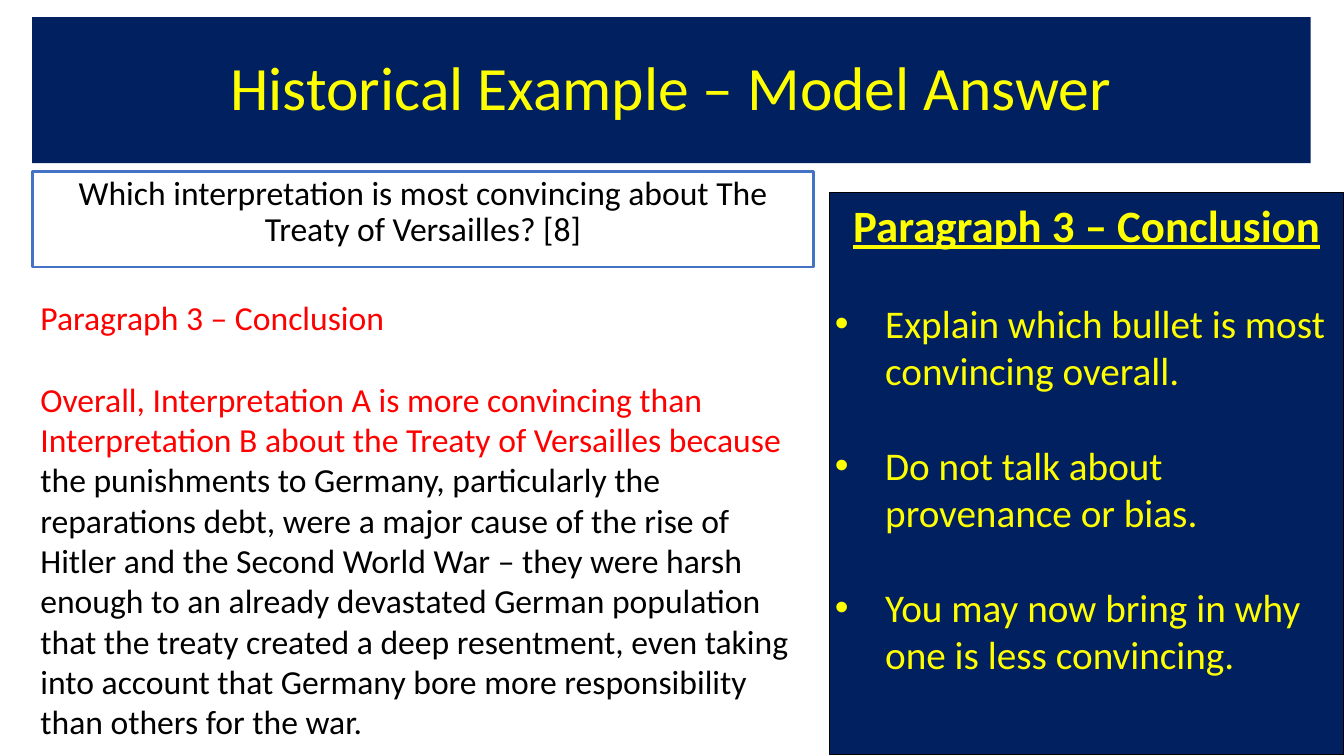
from dataclasses import dataclass

from lxml.etree import SubElement
from pptx import Presentation
from pptx.dml.color import RGBColor
from pptx.enum.shapes import MSO_SHAPE
from pptx.enum.text import MSO_ANCHOR, PP_ALIGN
from pptx.oxml.ns import qn
from pptx.slide import Slide
from pptx.util import Inches, Pt


@dataclass(frozen=True)
class Theme:
    font: str = "Calibri"
    navy: str = "002060"
    yellow: str = "FFFF00"
    blue: str = "4472C4"
    red: str = "FF0000"
    black: str = "000000"
    title_size: int = 44
    heading_size: int = 32
    bullet_size: int = 28
    body_size: int = 24
    line_height: float = 1.22
    inset: float = 0.05
    bullet_indent: float = 0.5


THEME = Theme()


@dataclass(frozen=True)
class Area:
    left: float
    top: float
    width: float
    height: float


@dataclass(frozen=True)
class Span:
    text: str
    color: str


@dataclass(frozen=True)
class Line:
    spans: tuple[Span, ...]
    size: int
    align: PP_ALIGN = PP_ALIGN.LEFT
    spacing: float = 1.0
    emphasis: bool = False
    bullet: bool = False
    gap_before: float = 0


@dataclass(frozen=True)
class Box:
    area: Area
    lines: tuple[Line, ...]
    fill: str | None = None
    outline: str | None = None
    outline_width: float = 0
    anchor: MSO_ANCHOR = MSO_ANCHOR.TOP


def blank_line(size: int) -> float:
    return size * THEME.line_height


def bullet_line(text: str) -> Line:
    return Line((Span(text, THEME.yellow),), THEME.bullet_size, bullet=True,
                gap_before=blank_line(THEME.bullet_size))


BOXES = (
    Box(
        Area(2.4, 2.27, 95.12, 19.33),
        (Line((Span("Historical Example – Model Answer", THEME.yellow),),
              THEME.title_size, PP_ALIGN.CENTER, spacing=0.9),),
        fill=THEME.navy,
        anchor=MSO_ANCHOR.MIDDLE,
    ),
    Box(
        Area(2.4, 22.67, 58.14, 12.67),
        (Line((Span("Which interpretation is most convincing about The Treaty of "
                    "Versailles? [8]", THEME.black),),
              THEME.body_size, PP_ALIGN.CENTER, spacing=0.9),),
        outline=THEME.blue,
        outline_width=1.75,
    ),
    Box(
        Area(61.74, 25.47, 38.26, 74.4),
        (
            Line((Span("Paragraph 3 – Conclusion", THEME.yellow),),
                 THEME.heading_size, PP_ALIGN.CENTER, emphasis=True),
            bullet_line("Explain which bullet is most convincing overall."),
            bullet_line("Do not talk about provenance or bias."),
            bullet_line("You may now bring in why one is less convincing."),
        ),
        fill=THEME.navy,
        outline=THEME.black,
        outline_width=0.75,
    ),
    Box(
        Area(2.63, 38.67, 57.91, 63.6),
        (
            Line((Span("Paragraph 3 – Conclusion", THEME.red),), THEME.body_size),
            Line(
                (
                    Span("Overall, Interpretation A is more convincing than "
                         "Interpretation B about the Treaty of Versailles because",
                         THEME.red),
                    Span(" the punishments to Germany, particularly the reparations "
                         "debt, were a major cause of the rise of Hitler and the "
                         "Second World War – they were harsh enough to an already "
                         "devastated German population that the treaty created a "
                         "deep resentment, even taking into account that Germany "
                         "bore more responsibility than others for the war.",
                         THEME.black),
                ),
                THEME.body_size,
                gap_before=blank_line(THEME.body_size),
            ),
        ),
    ),
)


def add_bullet(paragraph) -> None:
    properties = paragraph._p.get_or_add_pPr()
    indent = Inches(THEME.bullet_indent)
    properties.set("marL", str(indent))
    properties.set("indent", str(-indent))
    SubElement(properties, qn("a:buFont")).set("typeface", "Arial")
    SubElement(properties, qn("a:buChar")).set("char", "•")


def write_line(paragraph, line: Line) -> None:
    paragraph.alignment = line.align
    paragraph.line_spacing = line.spacing
    paragraph.space_before = Pt(line.gap_before)
    paragraph.font.name = THEME.font
    paragraph.font.size = Pt(line.size)
    paragraph.font.bold = line.emphasis
    paragraph.font.underline = line.emphasis
    if line.bullet:
        add_bullet(paragraph)
    for span in line.spans:
        run = paragraph.add_run()
        run.text = span.text
        run.font.color.rgb = RGBColor.from_string(span.color)


def draw_box(slide: Slide, box: Box, column: float, row: float) -> None:
    area = box.area
    place = (int(area.left * column), int(area.top * row),
             int(area.width * column), int(area.height * row))
    if box.fill or box.outline:
        shape = slide.shapes.add_shape(MSO_SHAPE.RECTANGLE, *place)
        shape.shadow.inherit = False
        if box.fill:
            shape.fill.solid()
            shape.fill.fore_color.rgb = RGBColor.from_string(box.fill)
        else:
            shape.fill.background()
        if box.outline:
            shape.line.color.rgb = RGBColor.from_string(box.outline)
            shape.line.width = Pt(box.outline_width)
        else:
            shape.line.fill.background()
    else:
        shape = slide.shapes.add_textbox(*place)
    frame = shape.text_frame
    frame.word_wrap = True
    frame.vertical_anchor = box.anchor
    frame.margin_left = frame.margin_right = Inches(THEME.inset)
    frame.margin_top = frame.margin_bottom = Inches(THEME.inset)
    for index, line in enumerate(box.lines):
        paragraph = frame.add_paragraph() if index else frame.paragraphs[0]
        write_line(paragraph, line)


def main() -> None:
    presentation = Presentation()
    presentation.slide_width = Inches(13.33)
    presentation.slide_height = Inches(7.5)
    slide = presentation.slides.add_slide(presentation.slide_layouts[6])
    column = presentation.slide_width / 100
    row = presentation.slide_height / 100
    for box in BOXES:
        draw_box(slide, box, column, row)
    presentation.save("out.pptx")


if __name__ == "__main__":
    main()
